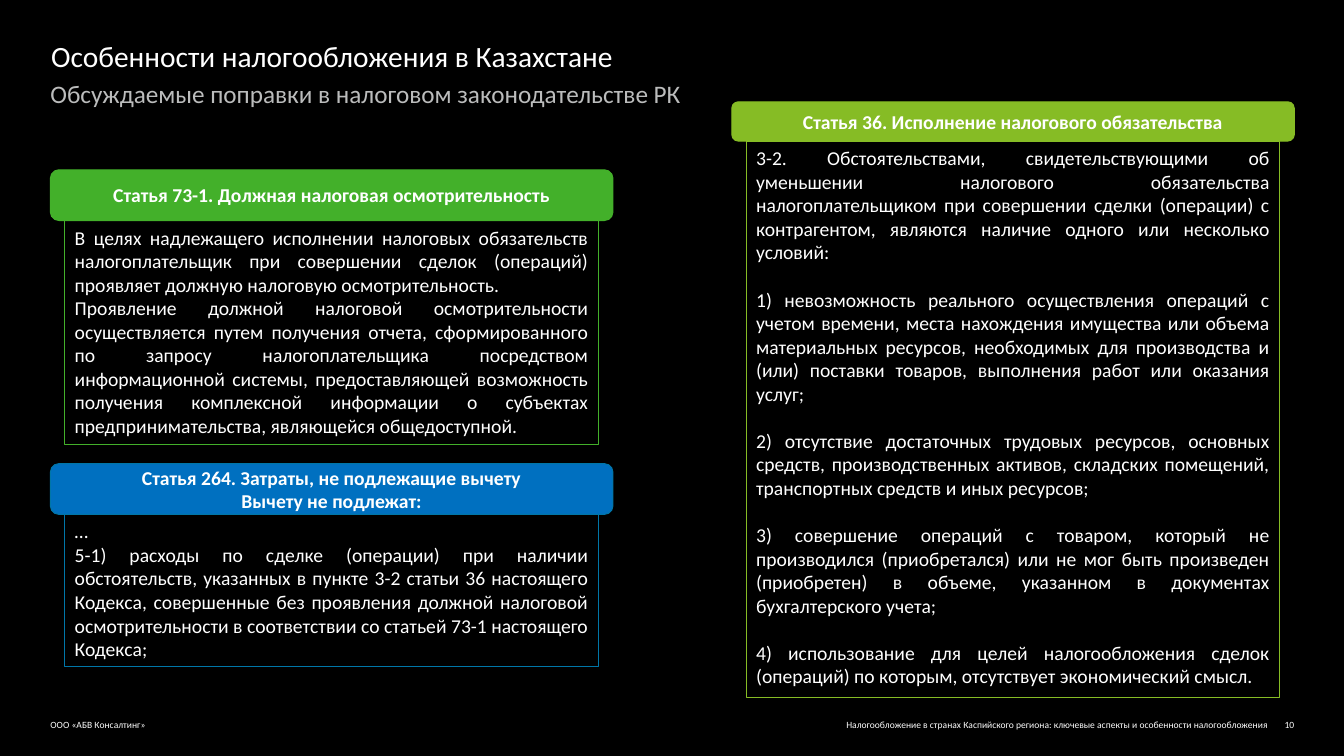
import pptx
import pptx.dml.color
import pptx.enum.shapes
import pptx.enum.text
import pptx.util

Pt = pptx.util.Pt
RGBColor = pptx.dml.color.RGBColor
SHAPE = pptx.enum.shapes.MSO_SHAPE
ANCHOR = pptx.enum.text.MSO_ANCHOR
ALIGN = pptx.enum.text.PP_ALIGN

BLACK = RGBColor(0x00, 0x00, 0x00)
WHITE = RGBColor(0xFF, 0xFF, 0xFF)
GREY = RGBColor(0xBB, 0xBC, 0xBC)
GREEN = RGBColor(0x43, 0xB0, 0x2A)
LIME = RGBColor(0x86, 0xBC, 0x25)
BLUE = RGBColor(0x00, 0x70, 0xC0)
DEEP_BLUE = RGBColor(0x00, 0x76, 0xA8)

LEFT_COLUMN, RIGHT_COLUMN = 36, 522.7
COLUMN_WIDTH = 401.8
BODY_INDENT = 10.3


class TaxSlide:
    font = "Calibri"
    article_size = 14

    def __init__(self, slide):
        self.slide = slide
        slide.background.fill.solid()
        slide.background.fill.fore_color.rgb = BLACK

    def set_text(self, frame, text, size, color, align, margins, bold=False, gap=0):
        frame.word_wrap = True
        frame.margin_left = frame.margin_right = Pt(margins[0])
        frame.margin_top = frame.margin_bottom = Pt(margins[1])
        frame.text = text
        for number, paragraph in enumerate(frame.paragraphs):
            paragraph.alignment = align
            if number and gap:
                paragraph.space_before = Pt(gap)
            for run in paragraph.runs:
                run.font.name = self.font
                run.font.size = Pt(size)
                run.font.bold = bold
                run.font.color.rgb = color

    def label(self, box, text, size, color=WHITE, align=ALIGN.LEFT):
        frame = self.slide.shapes.add_textbox(*map(Pt, box)).text_frame
        self.set_text(frame, text, size, color, align, (0, 0))

    def panel(self, kind, box, line, fill=None):
        panel = self.slide.shapes.add_shape(kind, *map(Pt, box))
        panel.shadow.inherit = False
        panel.line.color.rgb = line
        panel.line.width = Pt(0.75)
        if fill is None:
            panel.fill.background()
        else:
            panel.fill.solid()
            panel.fill.fore_color.rgb = fill
        return panel.text_frame

    def article(self, left, top, heading_height, body_height, heading, body,
                fill, line, gap=0):
        """Framed text hanging under a rounded heading."""
        body_box = (left + BODY_INDENT, top + heading_height,
                    COLUMN_WIDTH - 2 * BODY_INDENT, body_height)
        frame = self.panel(SHAPE.RECTANGLE, body_box, line)
        frame.vertical_anchor = ANCHOR.TOP
        self.set_text(frame, body, self.article_size, WHITE, ALIGN.JUSTIFY,
                      (7.2, 3.6), gap=gap)

        heading_box = (left, top, COLUMN_WIDTH, heading_height)
        frame = self.panel(SHAPE.ROUNDED_RECTANGLE, heading_box, line, fill)
        frame.vertical_anchor = ANCHOR.MIDDLE
        self.set_text(frame, heading, self.article_size, WHITE, ALIGN.CENTER,
                      (2.9, 2.9), bold=True)


DILIGENCE = "\n".join([
    "В целях надлежащего исполнении налоговых обязательств налогоплательщик при "
    "совершении сделок (операций) проявляет должную налоговую осмотрительность.",
    "Проявление должной налоговой осмотрительности осуществляется путем получения "
    "отчета, сформированного по запросу налогоплательщика посредством "
    "информационной системы, предоставляющей возможность получения комплексной "
    "информации о субъектах предпринимательства, являющейся общедоступной.",
])
OBLIGATION = "\n".join([
    "3-2. Обстоятельствами, свидетельствующими об уменьшении налогового "
    "обязательства налогоплательщиком при совершении сделки (операции) с "
    "контрагентом, являются наличие одного или несколько условий:",
    "1) невозможность реального осуществления операций с учетом времени, места "
    "нахождения имущества или объема материальных ресурсов, необходимых для "
    "производства и (или) поставки товаров, выполнения работ или оказания услуг;",
    "2) отсутствие достаточных трудовых ресурсов, основных средств, "
    "производственных активов, складских помещений, транспортных средств и иных "
    "ресурсов;",
    "3) совершение операций с товаром, который не производился (приобретался) или "
    "не мог быть произведен (приобретен) в объеме, указанном в документах "
    "бухгалтерского учета;",
    "4) использование для целей налогообложения сделок (операций) по которым, "
    "отсутствует экономический смысл.",
])
EXPENSES = "\n".join([
    "…",
    "5-1) расходы по сделке (операции) при наличии обстоятельств, указанных в "
    "пункте 3-2 статьи 36 настоящего Кодекса, совершенные без проявления должной "
    "налоговой осмотрительности в соответствии со статьей 73-1 настоящего Кодекса;",
])


def main():
    deck = pptx.Presentation()
    deck.slide_width, deck.slide_height = Pt(960), Pt(540)
    page = TaxSlide(deck.slides.add_slide(deck.slide_layouts[6]))

    # Footer
    page.label((520.5, 513.4, 385.3, 8),
               "Налогообложение в странах Каспийского региона: "
               "ключевые аспекты и особенности налогообложения",
               6.8, align=ALIGN.RIGHT)
    page.label((900, 513.4, 24.5, 8), "10", 6.8, align=ALIGN.RIGHT)
    page.label((36, 513.4, 480, 8), "ООО «АБВ Консалтинг»", 6.8)

    # Title and subtitle
    page.label((36.5, 27.4, 888, 26.6), "Особенности налогообложения в Казахстане", 21)
    page.label((36, 56.2, 888.5, 30.2),
               "Обсуждаемые поправки в налоговом законодательстве РК", 18, GREY)

    # Articles of the tax code
    page.article(LEFT_COLUMN, 121.3, 36.2, 160,
                 "Статья 73-1. Должная налоговая осмотрительность",
                 DILIGENCE, GREEN, GREEN)
    page.article(RIGHT_COLUMN, 72.7, 28.1, 397.4,
                 "Статья 36. Исполнение налогового обязательства",
                 OBLIGATION, LIME, LIME, gap=16.9)
    page.article(LEFT_COLUMN, 331.2, 36.2, 108.7,
                 "Статья 264. Затраты, не подлежащие вычету\nВычету не подлежат:",
                 EXPENSES, BLUE, DEEP_BLUE)

    deck.save("out.pptx")


if __name__ == "__main__":
    main()
